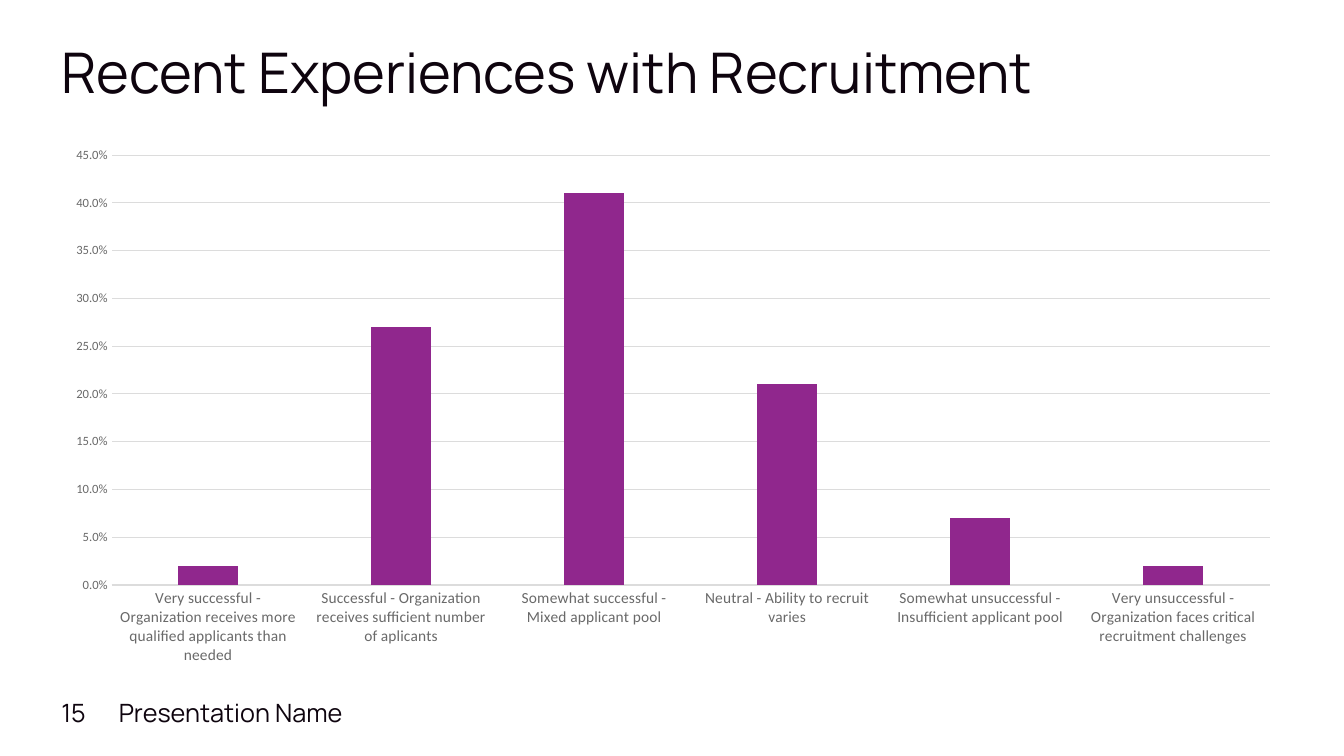
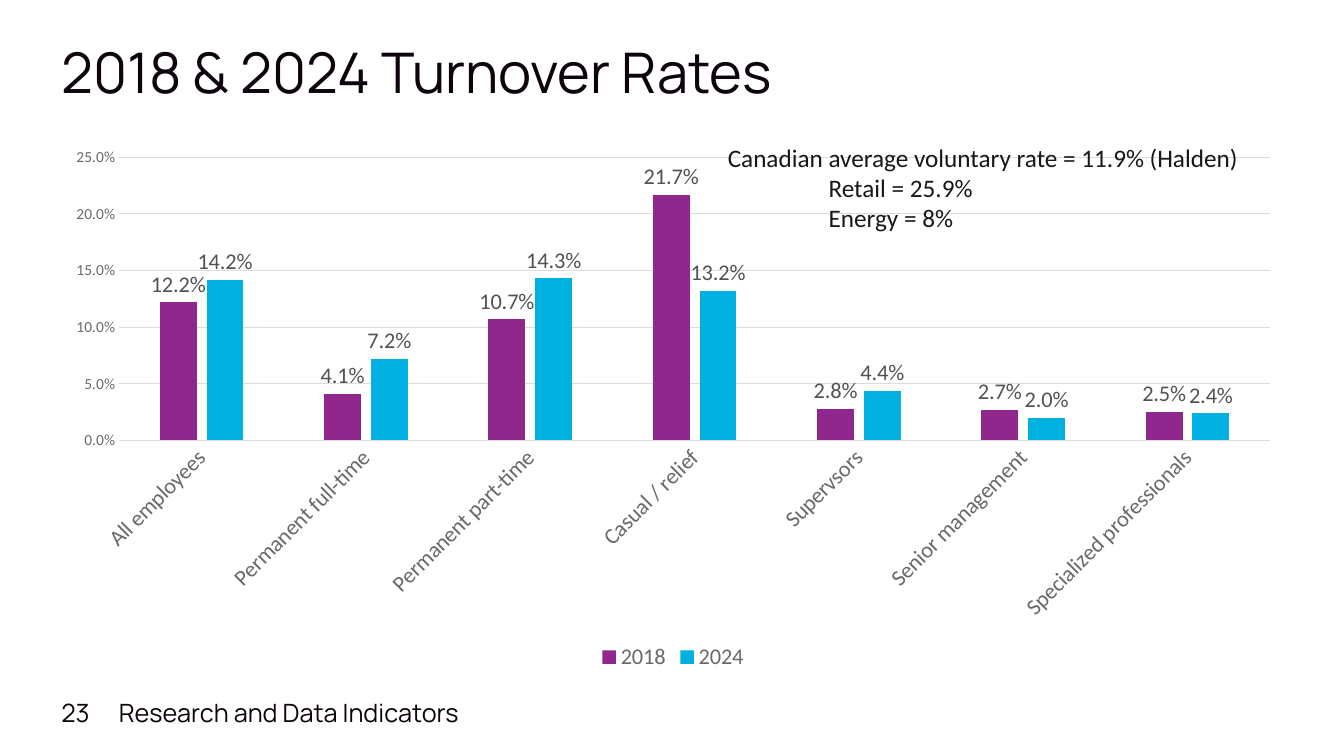
from pptx import Presentation
from pptx.chart.data import CategoryChartData
from pptx.dml.color import RGBColor
from pptx.enum import chart as ch, text as tx
from pptx.util import Inches, Pt

INK, BODY, GREY, LABEL, RULE = "0E040E", "181818", "696969", "525252", "DCDCDC"
PURPLE, BLUE = "90278D", "00B0E1"
HEAD, SANS = "Manrope", "Calibri"
LEFT, WIDTH = 0.51, 12.33
PERCENT = "0.0%"
CHART = (LEFT, 1.36, WIDTH, 5.34)


def rgb(code):
    return RGBColor.from_string(code)


def style(font, size, color, face=SANS):
    font.size, font.name, font.bold = Pt(size), face, False
    font.color.rgb = rgb(color)


def write(slide, box, lines, size=18, color=INK, face=HEAD,
          anchor=tx.MSO_ANCHOR.TOP, space=1.0, indent=0):
    """Place lines of text; those after the first are indented."""
    frame = slide.shapes.add_textbox(*map(Inches, box)).text_frame
    frame.word_wrap = True
    frame.vertical_anchor = anchor
    for i, line in enumerate(lines):
        para = frame.paragraphs[0] if i == 0 else frame.add_paragraph()
        para.line_spacing = space
        if i and indent:
            para._p.get_or_add_pPr().set("marL", str(Inches(indent)))
        run = para.add_run()
        run.text = line
        style(run.font, size, color, face)


def page(deck, title, number, footer):
    """Add a slide with its title and footer."""
    slide = deck.slides.add_slide(deck.slide_layouts[6])
    write(slide, (LEFT, 0.4, WIDTH, 0.61), [title], size=40, space=0.9)
    for left, width, line in ((LEFT, 0.56, str(number)), (1.08, 3.67, footer)):
        write(slide, (left, 6.87, width, 0.4), [line],
              anchor=tx.MSO_ANCHOR.MIDDLE)
    return slide


def columns(slide, box, cats, series, top, sizes, turn=0, labels=False):
    """Add a column chart; series holds (name, colour, values) rows."""
    data = CategoryChartData(number_format=PERCENT)
    data.categories = cats
    for name, _, vals in series:
        data.add_series(name, vals)
    chart = slide.shapes.add_chart(ch.XL_CHART_TYPE.COLUMN_CLUSTERED,
                                   *map(Inches, box), data).chart
    style(chart.font, 10, BODY)
    chart.has_title = False
    chart.has_legend = labels
    if labels:
        chart.legend.position = ch.XL_LEGEND_POSITION.BOTTOM
        chart.legend.include_in_layout = False
        style(chart.legend.font, 16, GREY)

    cat, val = chart.category_axis, chart.value_axis
    for axis, size in zip((cat, val), sizes):
        axis.major_tick_mark = axis.minor_tick_mark = ch.XL_TICK_MARK.NONE
        style(axis.tick_labels.font, size, GREY)
    cat._element.txPr.bodyPr.set("rot", str(turn * 60000))
    val.minimum_scale, val.maximum_scale, val.major_unit = 0, top, 0.05
    val.tick_labels.number_format = PERCENT
    val.tick_labels.number_format_is_linked = False
    val.format.line.fill.background()
    for part in (cat, val.major_gridlines):
        part.format.line.color.rgb = rgb(RULE)
        part.format.line.width = Pt(0.75)

    plot = chart.plots[0]
    plot.vary_by_categories = False
    plot.gap_width, plot.overlap = 219, -27
    for bars, (_, color, _) in zip(plot.series, series):
        bars.format.fill.solid()
        bars.format.fill.fore_color.rgb = rgb(color)
        if labels:
            tags = bars.data_labels
            tags.show_value = True
            tags.position = ch.XL_LABEL_POSITION.OUTSIDE_END
            tags.number_format = PERCENT
            tags.number_format_is_linked = False
            style(tags.font, 16, LABEL)


def hiring(deck):
    slide = page(deck, "Recent Experiences with Recruitment", 15,
                 "Presentation Name")
    cats = [
        "Very successful - Organization receives more qualified applicants than needed",
        "Successful - Organization receives sufficient number of aplicants",
        "Somewhat successful - Mixed applicant pool",
        "Neutral - Ability to recruit varies",
        "Somewhat unsuccessful - Insufficient applicant pool",
        "Very unsuccessful - Organization faces critical recruitment challenges",
    ]
    vals = (0.02, 0.27, 0.41, 0.21, 0.07, 0.02)
    columns(slide, CHART, cats, [("Series 1", PURPLE, vals)],
            top=0.45, sizes=(11, 9))


def turnover(deck):
    slide = page(deck, "2018 & 2024 Turnover Rates", 23,
                 "Research and Data Indicators")
    cats = ["All employees", "Permanent full-time", "Permanent part-time",
            "Casual / relief", "Supervsors", "Senior management",
            "Specialized professionals"]
    series = [
        ("2018", PURPLE, (0.122, 0.041, 0.107, 0.217, 0.028, 0.027, 0.025)),
        ("2024", BLUE, (0.142, 0.072, 0.143, 0.132, 0.044, 0.02, 0.024)),
    ]
    columns(slide, CHART, cats, series, top=0.25, sizes=(16, 11),
            turn=-45, labels=True)
    write(slide, (7.12, 1.36, 5.34, 1.01),
          ["Canadian average voluntary rate = 11.9% (Halden)",
           "Retail = 25.9%", "Energy = 8%"],
          color=BODY, face=SANS, indent=1)


def main():
    deck = Presentation()
    deck.slide_width, deck.slide_height = Inches(13.33), Inches(7.5)
    hiring(deck)
    turnover(deck)
    deck.save("out.pptx")


if __name__ == "__main__":
    main()
